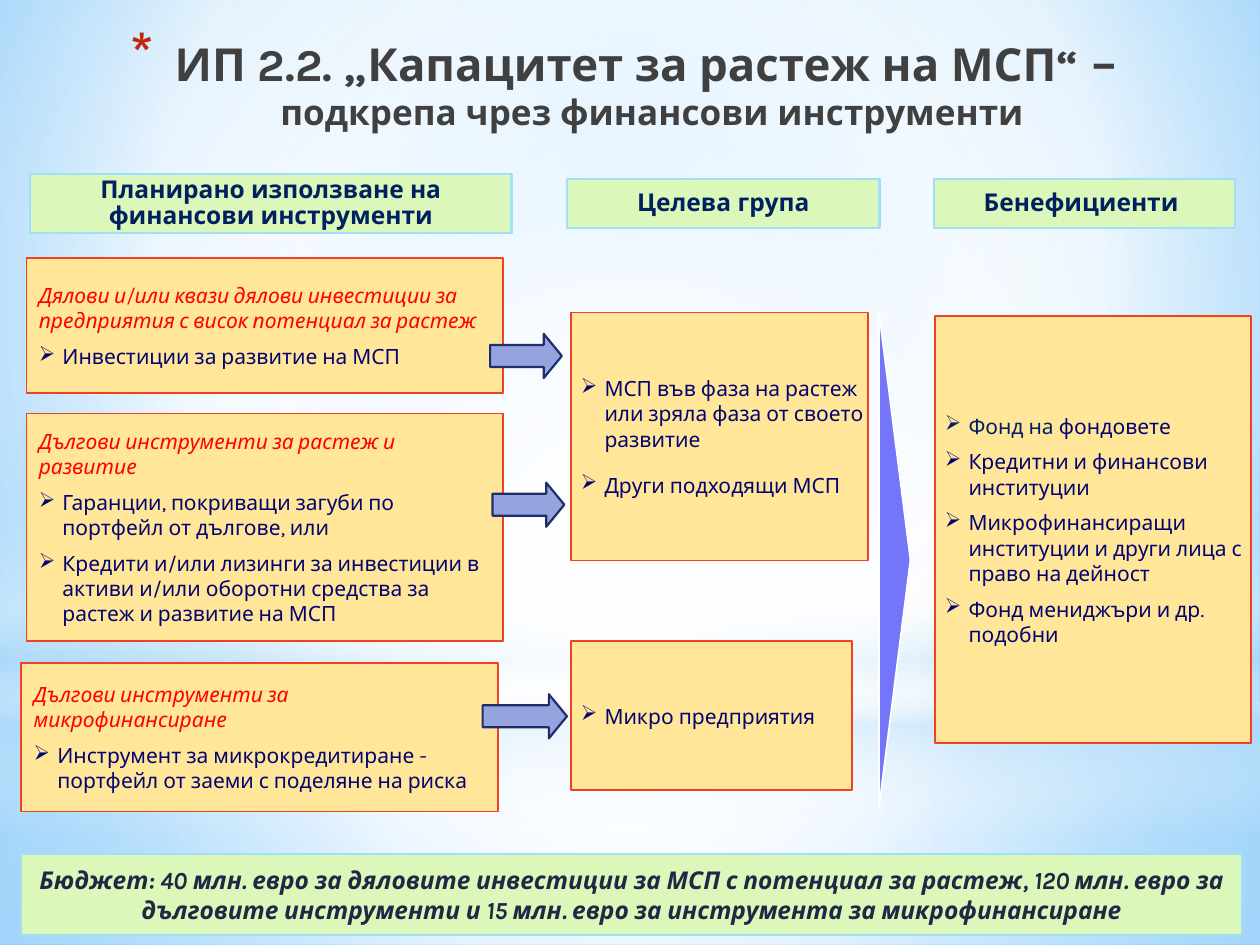
from lxml import etree
from pptx import Presentation
from pptx.dml.color import RGBColor
from pptx.enum.shapes import MSO_SHAPE
from pptx.enum.text import MSO_ANCHOR, MSO_AUTO_SIZE, PP_ALIGN
from pptx.oxml.ns import qn
from pptx.util import Pt

RECT, OVAL = MSO_SHAPE.RECTANGLE, MSO_SHAPE.OVAL
TRIANGLE, ARROW = MSO_SHAPE.ISOSCELES_TRIANGLE, MSO_SHAPE.RIGHT_ARROW
MIDDLE, NO_FIT = MSO_ANCHOR.MIDDLE, MSO_AUTO_SIZE.NONE
CENTER, LEFT = PP_ALIGN.CENTER, PP_ALIGN.LEFT

RED, INK, NAVY = "FF0000", "040470", "002060"
CENTRE = (50, 50, 50, 50)


def rgb(value):
    return RGBColor.from_string(value)


def gradient(stops, focus=None):
    """Gradient of (position, colour, opacity) in percent; linear downwards without a focus."""
    grad = etree.Element(qn("a:gradFill"), rotWithShape="1")
    gs_list = etree.SubElement(grad, qn("a:gsLst"))
    for pos, color, opacity in stops:
        gs = etree.SubElement(gs_list, qn("a:gs"), pos=str(pos * 1000))
        clr = etree.SubElement(gs, qn("a:srgbClr"), val=color)
        if opacity < 100:
            etree.SubElement(clr, qn("a:alpha"), val=str(opacity * 1000))
    if focus:
        circle = etree.SubElement(grad, qn("a:path"), path="circle")
        sides = {side: str(v * 1000) for side, v in zip("ltrb", focus)}
        etree.SubElement(circle, qn("a:fillToRect"), **sides)
    else:
        etree.SubElement(grad, qn("a:lin"), ang="5400000", scaled="0")
    return grad


def replace_solid(parent, grad):
    solid = parent.find(qn("a:solidFill"))
    parent.replace(solid, grad)


class Deck:
    font = "Karla"

    def __init__(self):
        self.prs = Presentation()
        self.prs.slide_width, self.prs.slide_height = Pt(720), Pt(540)
        self.s = self.prs.slides.add_slide(self.prs.slide_layouts[5])

    def background(self, stops, focus):
        fill = self.s.background.fill
        fill.solid()
        fill.fore_color.rgb = rgb("FFFFFF")
        replace_solid(self.s.background._cSld.bg.bgPr, gradient(stops, focus))

    def shape(self, kind, box, fill, line=None, width=1):
        sp = self.s.shapes.add_shape(kind, *map(Pt, box))
        sp.shadow.inherit = False
        sp.fill.solid()
        sp.fill.fore_color.rgb = rgb(fill)
        if line:
            sp.line.color.rgb = rgb(line)
            sp.line.width = Pt(width)
        else:
            sp.line.fill.background()
        return sp

    def glow(self, kind, box, stops, focus=None):
        sp = self.shape(kind, box, "FFFFFF")
        replace_solid(sp._element.spPr, gradient(stops, focus))

    def run(self, p, text, size, color, bold=False, italic=False):
        r = p.add_run()
        r.text = text
        f = r.font
        f.name, f.size, f.bold, f.italic = self.font, Pt(size), bold, italic
        f.color.rgb = rgb(color)

    def bullet(self, p, char, indent, color=None, percent=None):
        pPr = p._p.get_or_add_pPr()
        pPr.set("marL", str(Pt(indent)))
        pPr.set("indent", str(-Pt(indent)))
        if color:
            clr = etree.SubElement(pPr, qn("a:buClr"))
            etree.SubElement(clr, qn("a:srgbClr"), val=color)
        if percent:
            etree.SubElement(pPr, qn("a:buSzPct"), val=str(percent * 1000))
        etree.SubElement(pPr, qn("a:buChar"), char=char)

    def title(self, box, first, dash, second):
        sp = self.s.shapes.title
        sp.left, sp.top, sp.width, sp.height = map(Pt, box)
        self.s.shapes._spTree.append(sp._element)  # in front of the glows
        tf = sp.text_frame
        tf.word_wrap, tf.auto_size, tf.vertical_anchor = True, NO_FIT, MIDDLE
        p = tf.paragraphs[0]
        p.alignment = CENTER
        self.bullet(p, "*", 25.2, "C3260C", 128)
        self.run(p, first, 26, "404040", bold=True)
        self.run(p, dash, 28, "404040", bold=True)
        p.add_line_break()
        self.run(p, second, 20, "404040", bold=True)

    def banner(self, box, text, color=NAVY, italic=False, spacing=0.9, before=0):
        sp = self.shape(RECT, box, "DCF7BA", "9EE0F8", 1.25)
        tf = sp.text_frame
        tf.word_wrap, tf.vertical_anchor = True, MIDDLE
        tf.margin_top = tf.margin_bottom = 0
        p = tf.paragraphs[0]
        p.alignment, p.line_spacing, p.space_before = CENTER, spacing, Pt(before)
        self.run(p, text, 14, color, bold=True, italic=italic)

    def card(self, box, items, heading=None, before=0, margins=(5.76, 0)):
        """Yellow box; each item is a text or a list of (text, colour) runs."""
        sp = self.shape(RECT, box, "FFE699", "F14124")
        tf = sp.text_frame
        tf.word_wrap, tf.vertical_anchor = True, MIDDLE
        tf.margin_left, tf.margin_right = map(Pt, margins)
        rows = ([heading] if heading else []) + items
        for i, row in enumerate(rows):
            p = tf.paragraphs[0] if i == 0 else tf.add_paragraph()
            p.alignment, p.space_before, p.space_after = LEFT, Pt(before), Pt(6)
            if heading and i == 0:
                self.run(p, row, 12, RED, italic=True)
                continue
            self.bullet(p, "➢", 13.5)
            for text, color in [(row, INK)] if isinstance(row, str) else row:
                self.run(p, text, 12, color)

    def arrow(self, left, top, width):
        sp = self.shape(ARROW, (left, top, width, 25.2), "95A4DE", "1F2E69", 1.25)
        sp.adjustments[0], sp.adjustments[1] = 0.5, 0.41

    def wedge(self, box):
        self.shape(TRIANGLE, box, "7575FA", "FFFFFF").rotation = 90


def main():
    d = Deck()
    d.background([(0, "9ED5FF", 100), (60, "FFFFFF", 100), (100, "5BB9FF", 100)],
                 (20, 10, 20, 60))
    d.glow(RECT, (0, 401.8, 720, 138.2),
           [(0, "FFFFFF", 91), (37, "FFFFFF", 76), (100, "B4DCFA", 79)], CENTRE)
    d.glow(RECT, (0, 0, 720, 401.8),
           [(0, "FFFFFF", 89), (48, "FFFFFF", 62), (100, "B4DCFA", 79)], CENTRE)
    d.glow(RECT, (0, 296.6, 720, 180),
           [(0, "FFFFFF", 0), (29, "FFFFFF", 30), (45, "B4DCFA", 40),
            (55, "FFFFFF", 26), (65, "B4DCFA", 60), (100, "FFFFFF", 0)])
    d.glow(OVAL, (0, 126, 720, 401.8), [(0, "FFFFFF", 100), (56, "FFFFFF", 0)], CENTRE)

    d.title((0, 0, 720, 94.3), "ИП 2.2. „Капацитет за растеж на МСП“ ", "– ",
            "подкрепа чрез финансови инструменти")

    d.banner((17.3, 99.4, 275, 33.8), "Планирано използване на финансови инструменти")
    d.banner((324, 102.2, 178.6, 28.1), "Целева група")
    d.banner((533.5, 102.2, 172.1, 28.1), "Бенефициенти ")

    instruments = [
        ((15.1, 147.6, 272.2, 77),
         "Дялови и/или квази дялови инвестиции за предприятия с висок потенциал за растеж",
         ["Инвестиции за развитие на МСП"]),
        ((15.1, 236.2, 272.2, 130.3),
         "Дългови инструменти за растеж и развитие",
         ["Гаранции, покриващи загуби по портфейл от дългове, или",
          "Кредити и/или лизинги за инвестиции в активи и/или оборотни средства "
          "за растеж и развитие на МСП"]),
        ((12.2, 378.7, 272.2, 85),
         "Дългови инструменти за микрофинансиране",
         ["Инструмент за микрокредитиране - портфейл от заеми с поделяне на риска"]),
    ]
    for box, heading, items in instruments:
        d.card(box, items, heading, margins=(7.2, 7.2))

    d.card((326.2, 178.6, 169.9, 141.8),
           ["МСП във фаза на растеж или зряла фаза от своето развитие",
            "Други подходящи МСП"], before=6)
    d.card((326.2, 366.5, 160.6, 85), ["Микро предприятия"], before=6)
    d.card((534.2, 180.7, 180.7, 244.1),
           [[("Фонд на ", NAVY), ("фондовете", INK)],
            "Кредитни и финансови институции",
            "Микрофинансиращи институции и други лица с право на дейност",
            "Фонд мениджъри и др. подобни"])

    d.banner((12.2, 488.2, 697.7, 46.1),
             "Бюджет: 40 млн. евро за дяловите инвестиции за МСП с потенциал за растеж, "
             "120 млн. евро за дълговите инструменти и 15 млн. евро за инструмента "
             "за микрофинансиране",
             "212745", italic=True, spacing=1.0, before=6)

    d.wedge((369.4, 311, 283.7, 18))
    for left, top, width in [(280.1, 190.8, 41), (281.5, 275.8, 41), (275.8, 396.7, 48.2)]:
        d.arrow(left, top, width)

    d.prs.save("out.pptx")


if __name__ == "__main__":
    main()
